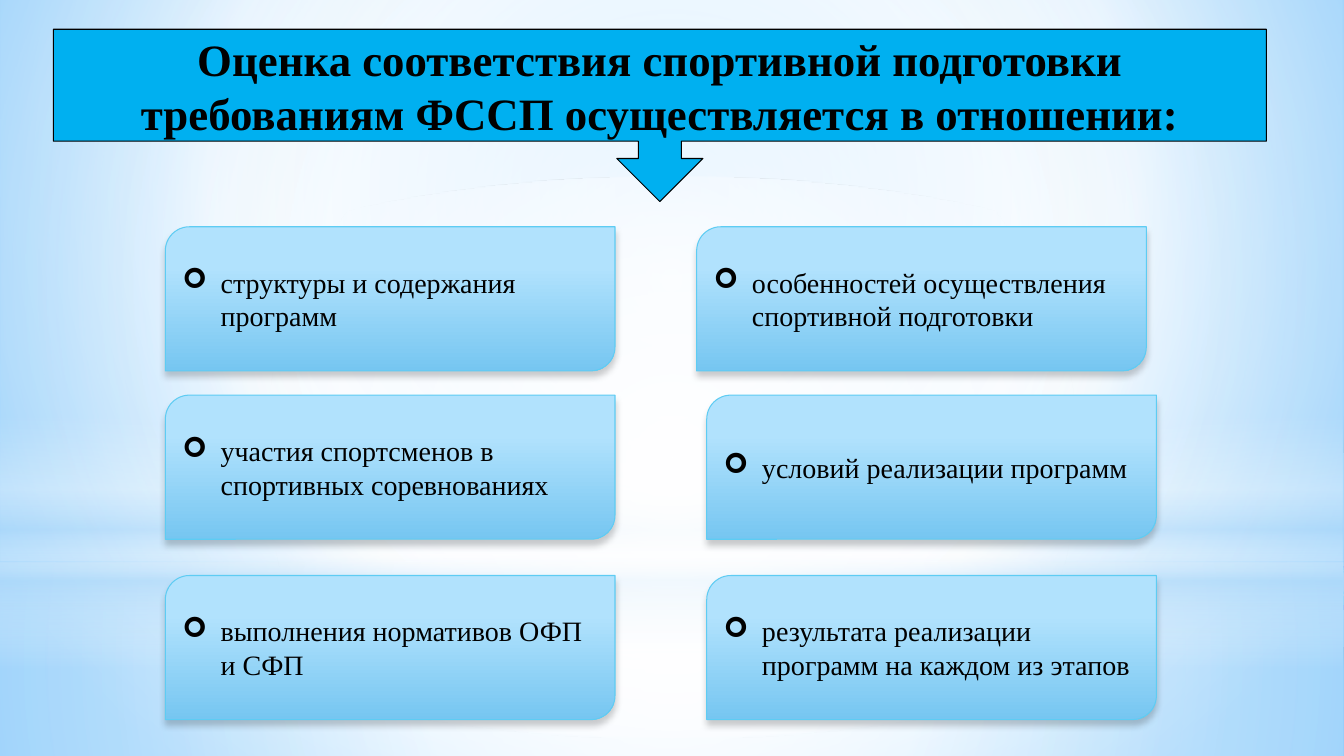
from pptx import Presentation, oxml, util as u
from pptx.dml.color import RGBColor
from pptx.enum import shapes, text
from pptx.oxml import ns

WIDTH, HEIGHT = 13.33, 7.5
FONT = "Times New Roman"
COLORS = {
    "black": "000000", "white": "FFFFFF", "header": "00B0F0",
    "sky": "9ED5FF", "deep": "5BB9FF", "haze": "B4DCFA",
    "card_top": "B1E2FD", "card_bottom": "76C6F1", "card_line": "5ECCF3",
}
TITLE = "Оценка соответствия спортивной подготовки требованиям ФССП осуществляется в отношении:"
CARDS = [
    ["структуры и содержания программ", "особенностей осуществления спортивной подготовки"],
    ["участия спортсменов в спортивных соревнованиях", "условий реализации программ"],
    ["выполнения нормативов ОФП и СФП", "результата реализации программ на каждом из этапов"],
]
ROW_TOPS = [2.25, 3.92, 5.71]
COLUMN_LEFTS = [1.64, 7.01]
FIRST_ROW_SHIFT = -0.1
CARD_SIZE = (4.46, 1.43)
CENTER = (50, 50, 50, 50)
BACKDROP = ([(0, "sky", 100), (60, "white", 100), (100, "deep", 100)], (20, 10, 20, 60))
CARD_FILL = [(28, "card_top", 100), (100, "card_bottom", 100)]
LAYERS = [
    ("RECTANGLE", 5.58, 1.92, [(0, "white", 91), (37, "white", 76), (100, "haze", 79)], CENTER),
    ("RECTANGLE", 0, 5.58, [(0, "white", 89), (48, "white", 62), (100, "haze", 79)], CENTER),
    ("RECTANGLE", 4.12, 2.5, [(0, "white", 0), (29, "white", 30), (45, "haze", 40),
                              (55, "white", 26), (65, "haze", 60), (100, "white", 0)], None),
    ("OVAL", 1.75, 5.58, [(0, "white", 100), (56, "white", 0)], CENTER),
]


def rgb(name):
    return RGBColor.from_string(COLORS[name])


def set_gradient(fill, holder, stops, focus=None):
    fill.solid()
    stop_xml = "".join(
        f'<a:gs pos="{position * 1000}"><a:srgbClr val="{COLORS[color]}">'
        f'<a:alpha val="{opacity * 1000}"/></a:srgbClr></a:gs>'
        for position, color, opacity in stops)
    if focus:
        sides = " ".join(f'{side}="{share * 1000}"' for side, share in zip("ltrb", focus))
        direction = f'<a:path path="circle"><a:fillToRect {sides}/></a:path>'
    else:
        direction = '<a:lin ang="5400000" scaled="0"/>'
    gradient = oxml.parse_xml(
        f'<a:gradFill {ns.nsdecls("a")} rotWithShape="1"><a:gsLst>{stop_xml}</a:gsLst>'
        f'{direction}</a:gradFill>')
    holder.replace(holder.find(ns.qn("a:solidFill")), gradient)


def add_shape(slide, kind, left, top, width, height, line=None):
    shape = slide.shapes.add_shape(
        getattr(shapes.MSO_SHAPE, kind), *map(u.Inches, (left, top, width, height)))
    shape.shadow.inherit = False
    if line:
        shape.line.color.rgb = rgb(line)
        shape.line.width = u.Pt(0.75)
    else:
        shape.line.fill.background()
    return shape


def write(shape, words, size, align, bold=False):
    frame = shape.text_frame
    frame.word_wrap = True
    frame.vertical_anchor = text.MSO_ANCHOR.MIDDLE
    paragraph = frame.paragraphs[0]
    paragraph.alignment = align
    run = paragraph.add_run()
    run.text = words
    run.font.name = FONT
    run.font.size = u.Pt(size)
    run.font.bold = bold
    run.font.color.rgb = rgb("black")
    return paragraph


def add_bullet(paragraph):
    properties = paragraph._p.get_or_add_pPr()
    indent = u.Inches(0.38)
    properties.set("marL", str(indent))
    properties.set("indent", str(-indent))
    for tag in ('buFont typeface="Wingdings"', 'buChar char="➢"'):
        properties.append(oxml.parse_xml(f'<a:{tag} {ns.nsdecls("a")}/>'))


def add_shadow(shape):
    effects = shape.element.spPr.find(ns.qn("a:effectLst"))
    effects.append(oxml.parse_xml(
        f'<a:outerShdw {ns.nsdecls("a")} blurRad="{u.Pt(5)}" dist="{u.Pt(4)}" dir="5400000" '
        f'rotWithShape="0"><a:srgbClr val="{COLORS["black"]}"><a:alpha val="20000"/>'
        '</a:srgbClr></a:outerShdw>'))


def add_card(slide, left, top, words):
    card = add_shape(slide, "ROUND_2_DIAG_RECTANGLE", left, top, *CARD_SIZE, line="card_line")
    set_gradient(card.fill, card.element.spPr, CARD_FILL)
    add_shadow(card)
    add_bullet(write(card, words, 20, text.PP_ALIGN.LEFT))


def main():
    presentation = Presentation()
    presentation.slide_width = u.Inches(WIDTH)
    presentation.slide_height = u.Inches(HEIGHT)
    slide = presentation.slides.add_slide(presentation.slide_layouts[6])

    backdrop = slide.background.fill
    backdrop.solid()
    set_gradient(backdrop, slide.element.find(".//" + ns.qn("p:bgPr")), *BACKDROP)
    for kind, top, height, stops, focus in LAYERS:
        layer = add_shape(slide, kind, 0, top, WIDTH, height)
        set_gradient(layer.fill, layer.element.spPr, stops, focus)

    header = add_shape(slide, "DOWN_ARROW_CALLOUT", 0.53, 0.29, 12.03, 1.71, line="black")
    header.fill.solid()
    header.fill.fore_color.rgb = rgb("header")
    write(header, TITLE, 32, text.PP_ALIGN.CENTER, bold=True)

    for row, (top, labels) in enumerate(zip(ROW_TOPS, CARDS)):
        for column, (left, words) in enumerate(zip(COLUMN_LEFTS, labels)):
            shift = FIRST_ROW_SHIFT if row == 0 and column == 1 else 0
            add_card(slide, left + shift, top, words)

    presentation.save("out.pptx")


if __name__ == "__main__":
    main()
